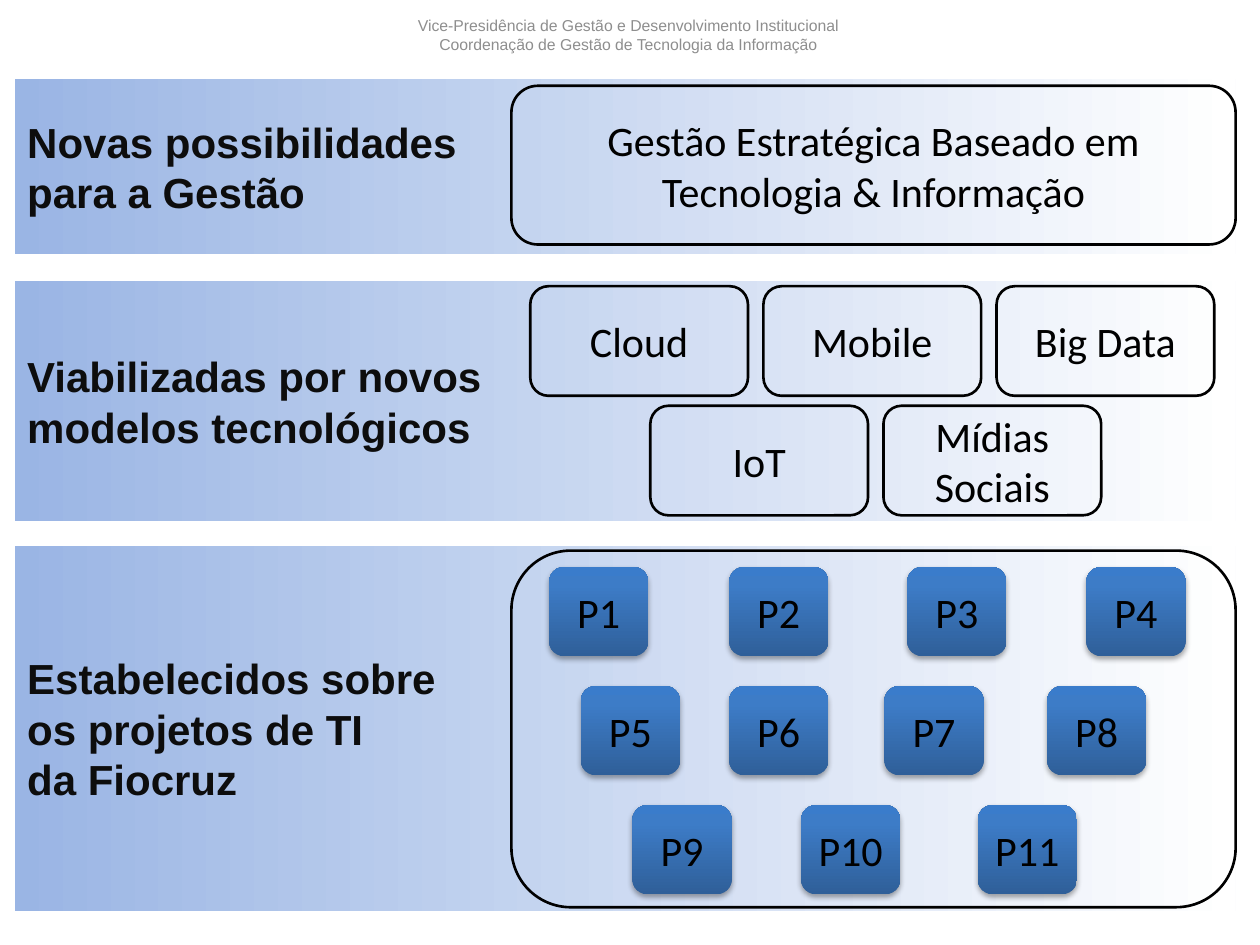
from copy import deepcopy
from dataclasses import dataclass

from lxml import etree
from pptx import Presentation
from pptx import util as u
from pptx.dml.color import RGBColor
from pptx.enum import shapes, text
from pptx.oxml import parse_xml
from pptx.oxml.ns import nsdecls, qn

HEADER = (
    "Vice-Presidência de Gestão e Desenvolvimento Institucional\n"
    "Coordenação de Gestão de Tecnologia da Informação"
)
BANDS = [
    ("Novas possibilidades\npara a Gestão", 1.6, 3.53),
    ("Viabilizadas por novos\nmodelos tecnológicos", 5.66, 4.85),
    ("Estabelecidos sobre\nos projetos de TI\nda Fiocruz", 11, 7.37),
]
STRATEGY = "Gestão Estratégica Baseado em Tecnologia & Informação"
MODEL_ROWS = [(10.69, ["Cloud", "Mobile", "Big Data"]), (13.11, ["IoT", "Mídias Sociais"])]
PROJECT_ROWS = [
    [11.07, 14.7, 18.29, 21.9],
    [11.71, 14.7, 17.83, 21.11],
    [12.75, 16.15, 19.71],
]


@dataclass(frozen=True)
class Theme:
    heading_font: str = "Arial"
    body_font: str = "Calibri"
    header_size: float = 9
    body_size: float = 24
    line_width: float = 1.5
    header: str = "8E8E8E"
    heading: str = "0D0D0D"
    ink: str = "000000"
    band: tuple = ((0, "9AB5E4"), (1, "FFFFFF"))
    project: tuple = ((0, "2F5F99"), (0.8, "3D7CC7"), (1, "3A7CCB"))


THEME = Theme()


def write(shape, content, font, size, color, align, bold=False):
    frame = shape.text_frame
    frame.text = content
    frame.vertical_anchor = text.MSO_ANCHOR.MIDDLE
    for paragraph in frame.paragraphs:
        paragraph.alignment = align
        for run in paragraph.runs:
            run.font.name = font
            run.font.size = u.Pt(size)
            run.font.bold = bold
            run.font.color.rgb = RGBColor.from_string(color)


def add_block(parent, kind, left, top, width, height):
    shape = parent.shapes.add_shape(kind, u.Cm(left), u.Cm(top), u.Cm(width), u.Cm(height))
    shape.shadow.inherit = False
    shape.fill.background()
    shape.line.fill.background()
    shape.text_frame.word_wrap = True
    return shape


def add_rounded(parent, left, top, width, height, label="", outlined=True):
    shape = add_block(parent, shapes.MSO_SHAPE.ROUNDED_RECTANGLE, left, top, width, height)
    if outlined:
        shape.line.width = u.Pt(THEME.line_width)
        shape.line.color.rgb = RGBColor.from_string(THEME.ink)
    if label:
        write(shape, label, THEME.body_font, THEME.body_size, THEME.ink, text.PP_ALIGN.CENTER)
    return shape


def set_gradient(shape, stops, angle):
    shape.fill.gradient()
    shape.fill.gradient_angle = angle
    stop_list = shape._element.spPr.find(qn("a:gradFill")).find(qn("a:gsLst"))
    for _ in stops[2:]:
        stop_list.append(deepcopy(stop_list[-1]))
    for stop, (position, color) in zip(shape.fill.gradient_stops, stops):
        stop.position = position
        stop.color.rgb = RGBColor.from_string(color)


def add_shadow(shape):
    effects = shape._element.spPr.find(qn("a:effectLst"))
    shadow = parse_xml(
        f'<a:outerShdw {nsdecls("a")} blurRad="40000" dist="23000" dir="5400000" rotWithShape="0"/>'
    )
    color = etree.SubElement(shadow, qn("a:srgbClr"), val=THEME.ink)
    etree.SubElement(color, qn("a:alpha"), val="35000")
    effects.append(shadow)


def add_header(slide):
    box = slide.shapes.add_textbox(u.Cm(8.13), u.Cm(0.2), u.Cm(9.07), u.Cm(1.02))
    box.text_frame.word_wrap = False
    box.text_frame.auto_size = text.MSO_AUTO_SIZE.SHAPE_TO_FIT_TEXT
    write(box, HEADER, THEME.heading_font, THEME.header_size, THEME.header, text.PP_ALIGN.CENTER)


def add_bands(slide):
    for label, top, height in BANDS:
        band = add_block(slide, shapes.MSO_SHAPE.RECTANGLE, 0.3, top, 24.61, height)
        set_gradient(band, THEME.band, 0)
        write(band, label, THEME.heading_font, THEME.body_size, THEME.heading,
              text.PP_ALIGN.LEFT, bold=True)


def add_models(slide):
    group = slide.shapes.add_group_shape()
    for row, (start, labels) in enumerate(MODEL_ROWS):
        for column, label in enumerate(labels):
            add_rounded(group, start + 4.7 * column, 5.77 + 2.41 * row, 4.39, 2.21, label)


def add_projects(slide):
    group = slide.shapes.add_group_shape()
    number = 0
    for row, lefts in enumerate(PROJECT_ROWS):
        for left in lefts:
            number += 1
            project = add_rounded(group, left, 11.43 + 2.4 * row, 2, 1.8, f"P{number}", False)
            set_gradient(project, THEME.project, 90)
            add_shadow(project)
    add_rounded(group, 10.31, 11.1, 14.6, 7.19)


def main():
    """Build the slide on technology management and save it."""
    presentation = Presentation()
    presentation.slide_width = u.Cm(25.4)
    presentation.slide_height = u.Cm(19.05)
    slide = presentation.slides.add_slide(presentation.slide_layouts[6])
    add_header(slide)
    add_bands(slide)
    add_rounded(slide, 10.31, 1.73, 14.6, 3.2, STRATEGY)
    add_models(slide)
    add_projects(slide)
    presentation.save("out.pptx")


if __name__ == "__main__":
    main()
